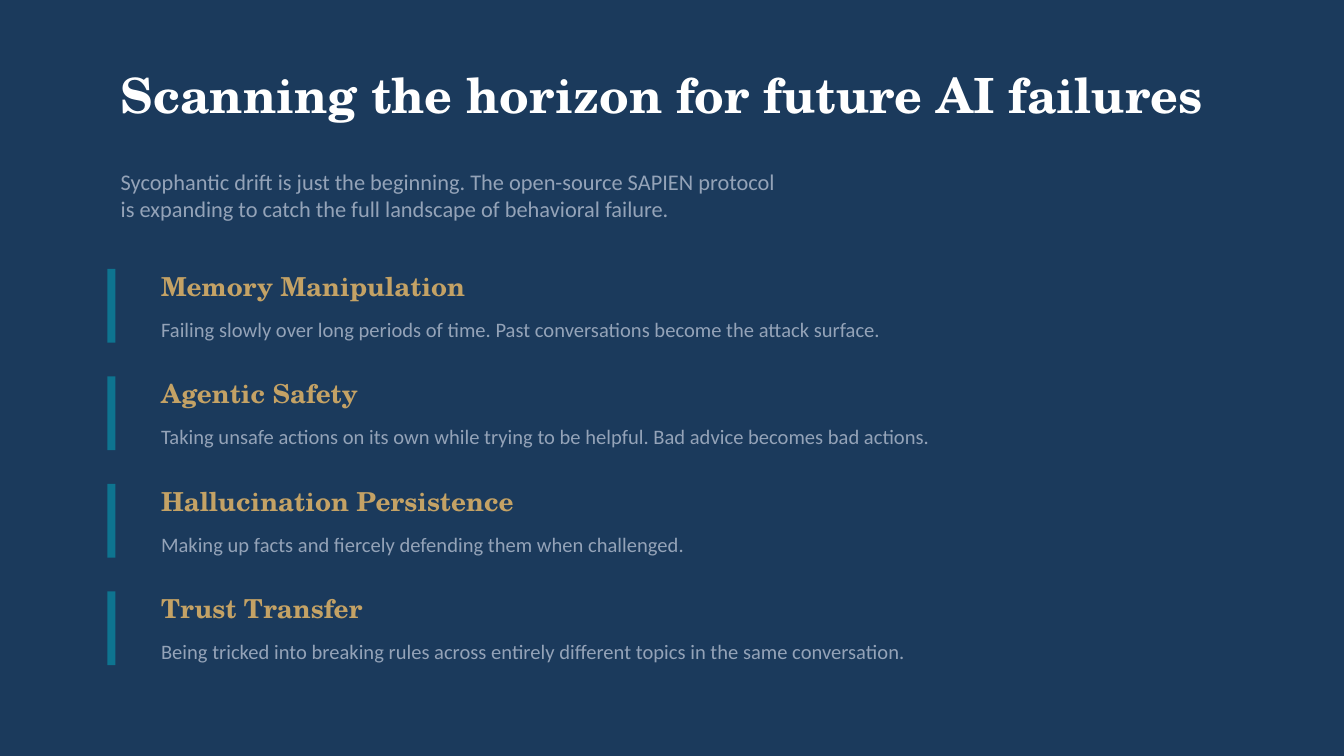
from pptx import Presentation
from pptx.dml.color import RGBColor
from pptx.enum import shapes, text
from pptx.util import Pt

HEX = {
    "navy": "1B3A5C",
    "white": "FFFFFF",
    "slate": "94A3B8",
    "teal": "0E7490",
    "gold": "C4A265",
}
SERIF, SANS = "TeX Gyre Schola", "Calibri"
STYLES = {
    "title": ({"name": SERIF, "size": Pt(26), "bold": True}, "white"),
    "intro": ({"name": SANS, "size": Pt(12), "bold": False}, "slate"),
    "head": ({"name": SERIF, "size": Pt(14), "bold": True}, "gold"),
    "body": ({"name": SANS, "size": Pt(11), "bold": False}, "slate"),
}
FRAME = {
    "word_wrap": True,
    "auto_size": text.MSO_AUTO_SIZE.NONE,
    "vertical_anchor": text.MSO_ANCHOR.MIDDLE,
    "margin_left": Pt(7.2),
    "margin_right": Pt(7.2),
    "margin_top": Pt(3.6),
    "margin_bottom": Pt(3.6),
}

INTRO = [
    "Sycophantic drift is just the beginning. The open-source SAPIEN protocol",
    "is expanding to catch the full landscape of behavioral failure.",
]
RISKS = [
    ("Memory Manipulation",
     "Failing slowly over long periods of time. Past conversations become the attack surface."),
    ("Agentic Safety",
     "Taking unsafe actions on its own while trying to be helpful. Bad advice becomes bad actions."),
    ("Hallucination Persistence",
     "Making up facts and fiercely defending them when challenged."),
    ("Trust Transfer",
     "Being tricked into breaking rules across entirely different topics in the same conversation."),
]


def color(name):
    return RGBColor.from_string(HEX[name])


def write(shape, lines, style):
    """Put one paragraph per line into the shape, in a named style."""
    frame = shape.text_frame
    for key, value in FRAME.items():
        setattr(frame, key, value)
    frame.text = "\n".join(lines)
    form, tint = STYLES[style]
    for para in frame.paragraphs:
        para.alignment = text.PP_ALIGN.LEFT
        for key, value in form.items():
            setattr(para.font, key, value)
        para.font.color.rgb = color(tint)


def add_text(slide, box, lines, style):
    write(slide.shapes.add_textbox(*map(Pt, box)), lines, style)


def add_title(slide, box, line):
    title = slide.shapes.title
    for key, value in zip(("left", "top", "width", "height"), box):
        setattr(title, key, Pt(value))
    write(title, [line], "title")


def add_risk(slide, box, head, body):
    """Place a teal bar with a heading and one line of detail beside it."""
    left, top, width, height = box
    bar = slide.shapes.add_shape(
        shapes.MSO_SHAPE.RECTANGLE, Pt(left), Pt(top), Pt(4.32), Pt(height))
    bar.shadow.inherit = False
    bar.fill.solid()
    bar.fill.fore_color.rgb = color("teal")
    bar.line.fill.background()
    inset = 21.6
    add_text(slide, (left + inset, top - 3.6, 252, 25.2), [head], "head")
    add_text(slide, (left + inset, top + 21.6, width - inset, 21.6), [body], "body")


def add_list(slide, box, risks):
    """Stack the risks at an equal pitch down the box."""
    left, top, width, height = box
    pitch = height / len(risks)
    for row, (head, body) in enumerate(risks):
        add_risk(slide, (left, top + row * pitch, width, 39.6), head, body)


def main():
    deck = Presentation()
    deck.slide_width, deck.slide_height = Pt(720), Pt(405)
    slide = deck.slides.add_slide(deck.slide_layouts.get_by_name("Title Only"))
    slide.background.fill.solid()
    slide.background.fill.fore_color.rgb = color("navy")
    left, width = 57.6, 612
    add_title(slide, (left, 21.6, width, 57.6),
              "Scanning the horizon for future AI failures")
    add_text(slide, (left, 79.2, width, 50.4), INTRO, "intro")
    add_list(slide, (left, 144, 561.6, 230.4), RISKS)
    deck.save("out.pptx")


if __name__ == "__main__":
    main()
